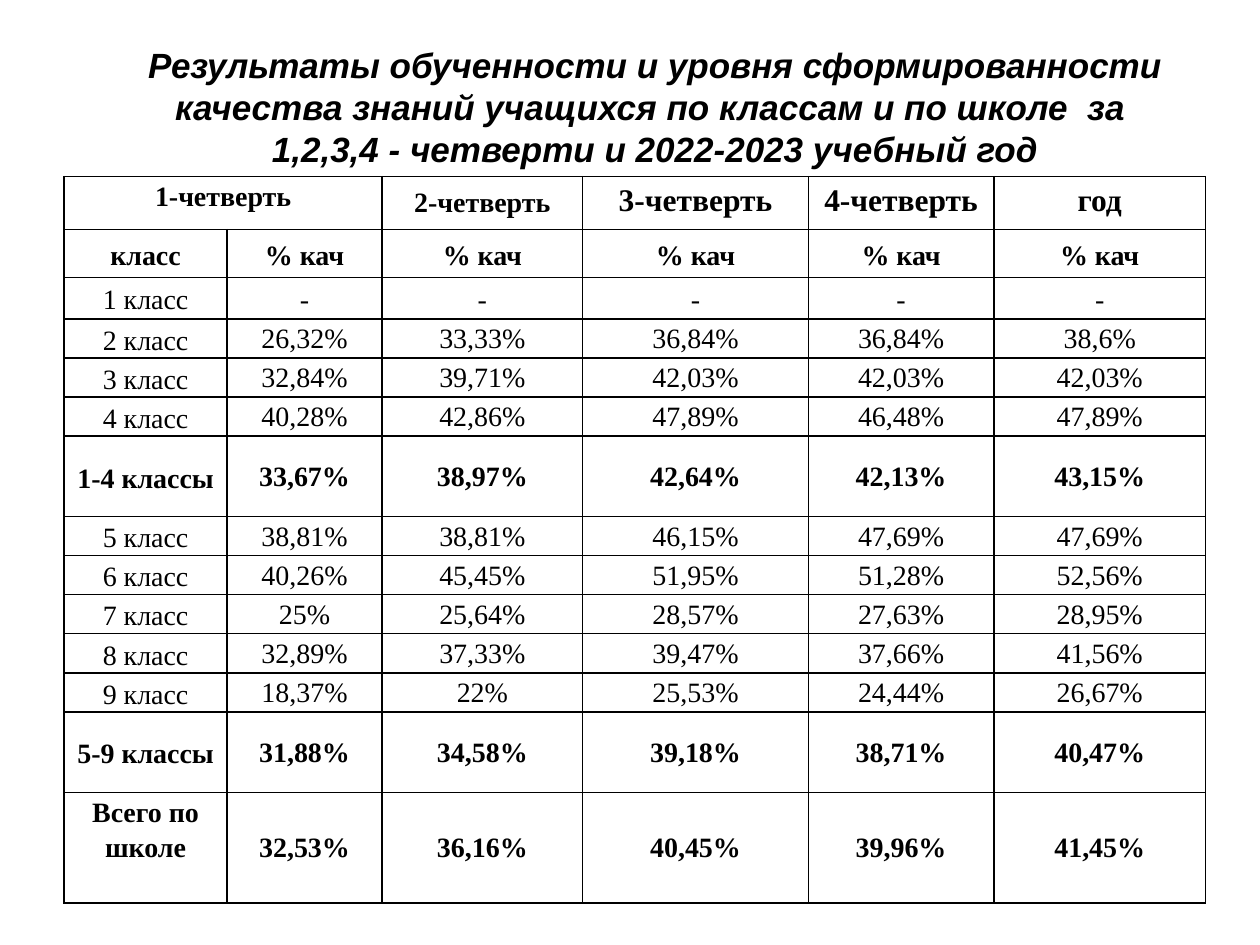
from dataclasses import dataclass
from typing import NamedTuple

from lxml.etree import SubElement
from pptx import Presentation
from pptx.dml.color import RGBColor
from pptx.enum.text import MSO_ANCHOR, MSO_AUTO_SIZE, PP_ALIGN
from pptx.oxml.ns import qn
from pptx.util import Inches, Pt


@dataclass(frozen=True)
class Theme:
    ink: str = "000000"
    title_font: str = "Arial"
    table_font: str = "Times New Roman"
    title_size: float = 20
    heading_size: float = 18
    body_size: float = 16
    border: float = 1
    label_spacing: float = 1.15


class Area(NamedTuple):
    """Left, top, width and height as shares of the slide."""
    left: float
    top: float
    width: float
    height: float


class Margins(NamedTuple):
    """Cell margins in inches."""
    left: float
    top: float
    right: float
    bottom: float


@dataclass(frozen=True)
class CellStyle:
    margins: Margins
    anchor: MSO_ANCHOR = MSO_ANCHOR.MIDDLE
    size: float = Theme.body_size
    bold: bool = False
    spacing: float | None = None


class ResultRow(NamedTuple):
    label: str
    values: tuple[str, ...]
    weight: int = 31
    bold: bool = False


THEME = Theme()
TITLE_AREA = Area(0.067, 0.039, 0.906, 0.148)
TABLE_AREA = Area(0.051, 0.187, 0.906, 0.769)
TITLE = ("Результаты обученности и уровня сформированности качества знаний "
         "учащихся по классам и по школе  за \n"
         "1,2,3,4 - четверти и 2022-2023 учебный год")
QUARTERS = ("1-четверть", "2-четверть", "3-четверть", "4-четверть", "год")
COLUMN_WEIGHTS = (129, 123, 159, 179, 147, 168)
HEADING_WEIGHT = 42

WIDE = Margins(0.07, 0, 0.07, 0)
TIGHT = Margins(0.01, 0.01, 0.01, 0)
ROOMY = Margins(0.1, 0.05, 0.1, 0.05)

RESULTS = (
    ResultRow("класс", ("% кач",) * 5, 38, True),
    ResultRow("1 класс", ("-",) * 5, 33),
    ResultRow("2 класс", ("26,32%", "33,33%", "36,84%", "36,84%", "38,6%")),
    ResultRow("3 класс", ("32,84%", "39,71%", "42,03%", "42,03%", "42,03%")),
    ResultRow("4 класс", ("40,28%", "42,86%", "47,89%", "46,48%", "47,89%")),
    ResultRow("1-4 классы", ("33,67%", "38,97%", "42,64%", "42,13%", "43,15%"), 64, True),
    ResultRow("5 класс", ("38,81%", "38,81%", "46,15%", "47,69%", "47,69%")),
    ResultRow("6 класс", ("40,26%", "45,45%", "51,95%", "51,28%", "52,56%")),
    ResultRow("7 класс", ("25%", "25,64%", "28,57%", "27,63%", "28,95%")),
    ResultRow("8 класс", ("32,89%", "37,33%", "39,47%", "37,66%", "41,56%")),
    ResultRow("9 класс", ("18,37%", "22%", "25,53%", "24,44%", "26,67%")),
    ResultRow("5-9 классы", ("31,88%", "34,58%", "39,18%", "38,71%", "40,47%"), 64, True),
    ResultRow("Всего по\nшколе", ("32,53%", "36,16%", "40,45%", "39,96%", "41,45%"), 88, True),
)


def place(deck, area: Area) -> tuple[int, int, int, int]:
    """Turn shares of the slide into lengths."""
    width, height = deck.slide_width, deck.slide_height
    return (int(area.left * width), int(area.top * height),
            int(area.width * width), int(area.height * height))


def format_text(frame, font: str, size: float, bold: bool,
                italic: bool = False, spacing: float | None = None) -> None:
    for para in frame.paragraphs:
        para.alignment = PP_ALIGN.CENTER
        if spacing:
            para.line_spacing = spacing
        for span in para.runs:
            span.font.name = font
            span.font.size = Pt(size)
            span.font.bold = bold
            span.font.italic = italic
            span.font.color.rgb = RGBColor.from_string(THEME.ink)


def add_borders(cell) -> None:
    properties = cell._tc.get_or_add_tcPr()
    for side in ("a:lnL", "a:lnR", "a:lnT", "a:lnB"):
        line = SubElement(properties, qn(side), w=str(Pt(THEME.border)))
        fill = SubElement(line, qn("a:solidFill"))
        SubElement(fill, qn("a:srgbClr"), val=THEME.ink)


def fill_cell(cell, text: str, style: CellStyle) -> None:
    cell.text_frame.text = text
    format_text(cell.text_frame, THEME.table_font, style.size, style.bold,
                spacing=style.spacing)
    cell.vertical_anchor = style.anchor
    (cell.margin_left, cell.margin_top,
     cell.margin_right, cell.margin_bottom) = map(Inches, style.margins)


def add_title(deck, page) -> None:
    box = page.shapes.title
    box.left, box.top, box.width, box.height = place(deck, TITLE_AREA)
    frame = box.text_frame
    frame.text = TITLE
    frame.word_wrap = True
    frame.auto_size = MSO_AUTO_SIZE.NONE
    frame.vertical_anchor = MSO_ANCHOR.TOP
    format_text(frame, THEME.title_font, THEME.title_size, bold=True, italic=True)


def fill_headings(table) -> None:
    table.cell(0, 0).merge(table.cell(0, 1))
    for index, quarter in enumerate(QUARTERS):
        small = index < 2
        style = CellStyle(
            margins=WIDE if index == 0 else ROOMY,
            anchor=MSO_ANCHOR.TOP,
            size=THEME.body_size if small else THEME.heading_size,
            bold=True,
            spacing=THEME.label_spacing if small else None)
        fill_cell(table.cell(0, index + 1 if index else 0), quarter, style)


def fill_results(table) -> None:
    for row_index, row in enumerate(RESULTS, start=1):
        is_total = row is RESULTS[-1]
        label_style = CellStyle(
            WIDE, MSO_ANCHOR.TOP if is_total else MSO_ANCHOR.MIDDLE,
            bold=row.bold, spacing=THEME.label_spacing)
        is_number = row.values[0].endswith("%")
        value_style = CellStyle(
            TIGHT if is_number else WIDE, bold=row.bold,
            spacing=None if is_number else THEME.label_spacing)
        fill_cell(table.cell(row_index, 0), row.label, label_style)
        for column_index, value in enumerate(row.values, start=1):
            fill_cell(table.cell(row_index, column_index), value, value_style)


def add_results_table(deck, page) -> None:
    left, top, width, height = place(deck, TABLE_AREA)
    row_weights = (HEADING_WEIGHT, *(row.weight for row in RESULTS))
    table = page.shapes.add_table(len(row_weights), len(COLUMN_WEIGHTS),
                                  left, top, width, height).table
    table.first_row = table.horz_banding = False
    for column, weight in zip(table.columns, COLUMN_WEIGHTS):
        column.width = width * weight // sum(COLUMN_WEIGHTS)
    for row, weight in zip(table.rows, row_weights):
        row.height = height * weight // sum(row_weights)
    for cell in table.iter_cells():
        add_borders(cell)
        cell.fill.background()
    fill_headings(table)
    fill_results(table)


def main() -> None:
    deck = Presentation()
    deck.slide_width, deck.slide_height = Inches(10), Inches(7.5)
    page = deck.slides.add_slide(deck.slide_layouts.get_by_name("Title Only"))
    add_results_table(deck, page)
    add_title(deck, page)
    deck.save("out.pptx")


if __name__ == "__main__":
    main()
